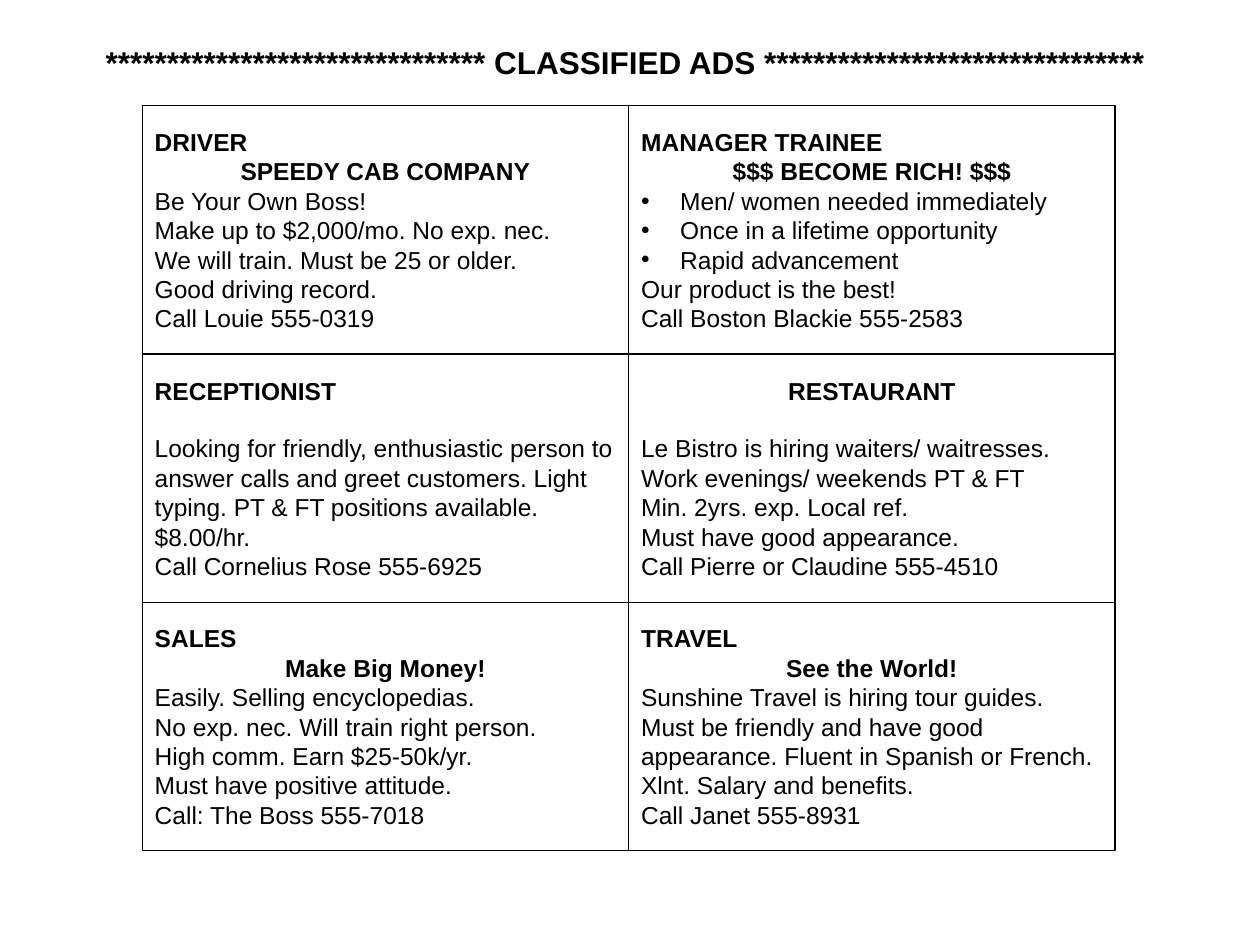
from dataclasses import dataclass

from lxml import etree
from pptx import Presentation
from pptx.dml.color import RGBColor
from pptx.enum.shapes import MSO_SHAPE
from pptx.enum.text import MSO_ANCHOR, PP_ALIGN
from pptx.oxml.ns import qn
from pptx.util import Inches, Pt

RECTANGLE = MSO_SHAPE.RECTANGLE
MIDDLE = MSO_ANCHOR.MIDDLE
LEFT, CENTER = PP_ALIGN.LEFT, PP_ALIGN.CENTER

GRID_LEFT, GRID_TOP = 1.13, 0.84
CELL_WIDTH, CELL_HEIGHT = 3.86, 1.97
COLUMNS = 2


@dataclass
class Line:
    text: str
    bold: bool = False
    alignment: int = LEFT
    bullet: bool = False
    space_after: float = 0


def heading(text, alignment=LEFT, space_after=0):
    return Line(text, bold=True, alignment=alignment, space_after=space_after)


def body(*texts):
    return [Line(text) for text in texts]


def bullets(*texts):
    return [Line(text, bullet=True) for text in texts]


ADS = [
    [
        heading("DRIVER"),
        heading("SPEEDY CAB COMPANY", CENTER),
        *body(
            "Be Your Own Boss!",
            "Make up to $2,000/mo. No exp. nec.",
            "We will train. Must be 25 or older.",
            "Good driving record.",
            "Call Louie 555-0319",
        ),
    ],
    [
        heading("MANAGER TRAINEE"),
        heading("$$$ BECOME RICH! $$$", CENTER),
        *bullets(
            "Men/ women needed immediately",
            "Once in a lifetime opportunity",
            "Rapid advancement",
        ),
        *body("Our product is the best!", "Call Boston Blackie 555-2583"),
    ],
    [
        heading("RECEPTIONIST", space_after=16),
        *body(
            "Looking for friendly, enthusiastic person to answer calls and greet "
            "customers. Light typing. PT & FT positions available. $8.00/hr.",
            "Call Cornelius Rose 555-6925",
        ),
    ],
    [
        heading("RESTAURANT", CENTER, space_after=16),
        *body(
            "Le Bistro is hiring waiters/ waitresses. Work evenings/ weekends PT & FT",
            "Min. 2yrs. exp. Local ref.",
            "Must have good appearance.",
            "Call Pierre or Claudine 555-4510",
        ),
    ],
    [
        heading("SALES"),
        heading("Make Big Money!", CENTER),
        *body(
            "Easily. Selling encyclopedias.",
            "No exp. nec. Will train right person.",
            "High comm. Earn $25-50k/yr.",
            "Must have positive attitude.",
            "Call: The Boss 555-7018",
        ),
    ],
    [
        heading("TRAVEL"),
        heading("See the World!", CENTER),
        *body(
            "Sunshine Travel is hiring tour guides.",
            "Must be friendly and have good appearance. Fluent in Spanish or French. "
            "Xlnt. Salary and benefits.",
            "Call Janet 555-8931",
        ),
    ],
]


def color(value):
    return RGBColor.from_string(value)


@dataclass
class AdPage:
    slide: object
    font_name: str = "Arial"
    ink: str = "000000"
    title_size: float = 18
    ad_size: float = 14

    def set_lines(self, text_frame, lines, size):
        text_frame.word_wrap = True
        text_frame.text = "\n".join(line.text for line in lines)
        for paragraph, line in zip(text_frame.paragraphs, lines):
            paragraph.alignment = line.alignment
            paragraph.space_after = Pt(line.space_after)
            if line.bullet:
                self.add_bullet(paragraph)
            for run in paragraph.runs:
                run.font.name = self.font_name
                run.font.size = Pt(size)
                run.font.bold = line.bold
                run.font.color.rgb = color(self.ink)

    def add_bullet(self, paragraph):
        properties = paragraph._p.get_or_add_pPr()
        properties.set("marL", str(Inches(0.31)))
        properties.set("indent", str(Inches(-0.31)))
        etree.SubElement(properties, qn("a:buFont"), typeface=self.font_name)
        etree.SubElement(properties, qn("a:buChar"), char="•")

    def add_title(self, text, left, top, width, height):
        box = self.slide.shapes.add_textbox(
            Inches(left), Inches(top), Inches(width), Inches(height)
        )
        self.set_lines(box.text_frame, [heading(text, CENTER)], self.title_size)

    def add_ad(self, lines, left, top):
        shape = self.slide.shapes.add_shape(
            RECTANGLE, Inches(left), Inches(top), Inches(CELL_WIDTH), Inches(CELL_HEIGHT)
        )
        shape.shadow.inherit = False
        shape.fill.background()
        shape.line.color.rgb = color(self.ink)
        shape.line.width = Pt(0.75)
        shape.text_frame.vertical_anchor = MIDDLE
        self.set_lines(shape.text_frame, lines, self.ad_size)


def main():
    presentation = Presentation()
    presentation.slide_width = Inches(10)
    presentation.slide_height = Inches(7.5)
    page = AdPage(presentation.slides.add_slide(presentation.slide_layouts[6]))

    for index, lines in enumerate(ADS):
        row, column = divmod(index, COLUMNS)
        page.add_ad(lines, GRID_LEFT + column * CELL_WIDTH, GRID_TOP + row * CELL_HEIGHT)

    stars = "*" * 31
    page.add_title(f"{stars} CLASSIFIED ADS {stars} ", 0.23, 0.29, 9.53, 0.4)

    presentation.save("out.pptx")


if __name__ == "__main__":
    main()
